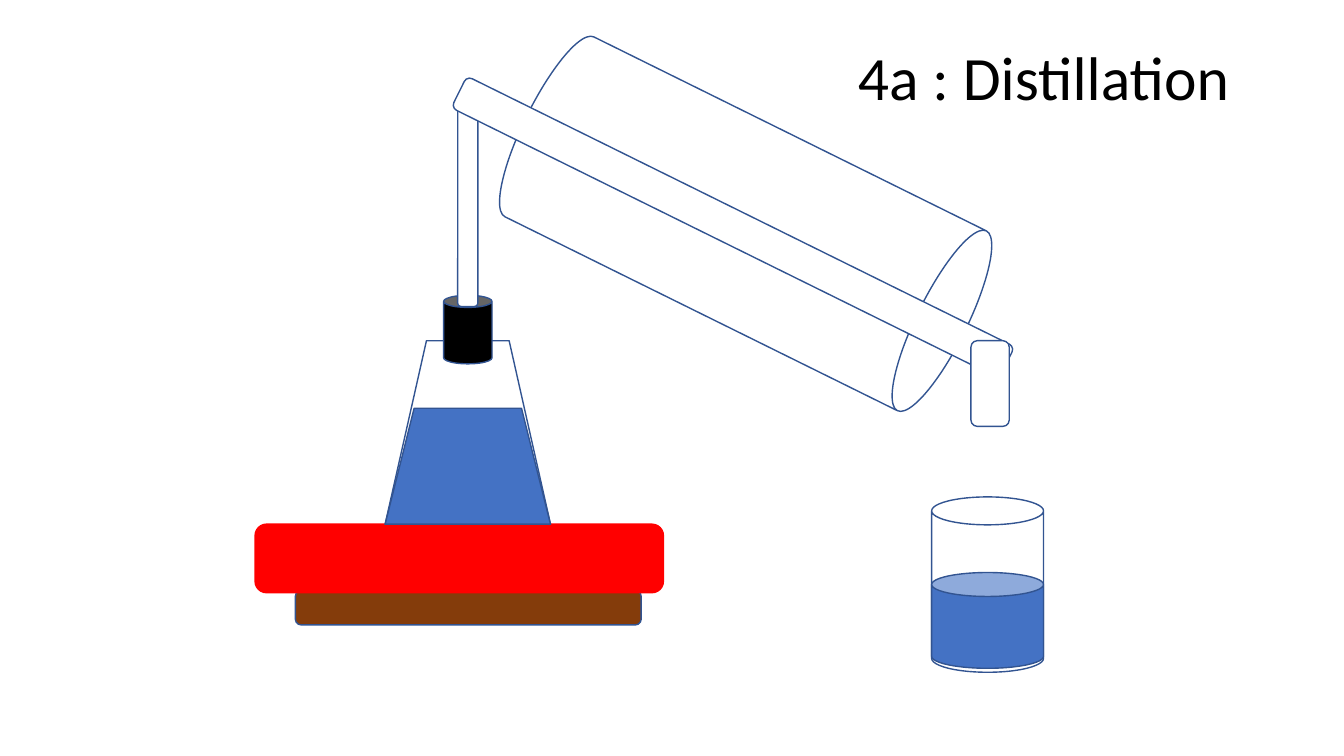
"""Draws a slide of a distillation set-up."""
from dataclasses import dataclass

from pptx import Presentation
from pptx.dml.color import RGBColor
from pptx.enum.shapes import MSO_SHAPE
from pptx.enum.text import MSO_AUTO_SIZE
from pptx.util import Pt

SCALE = 9144


@dataclass(frozen=True)
class Theme:
    """Holds the colours and type sizes of the slide."""
    glass: str = "FFFFFF"
    edge: str = "325491"
    liquid: str = "4472C4"
    heat: str = "FF0000"
    base: str = "843C0B"
    cork: str = "000000"
    ink: str = "000000"
    font: str = "Calibri"
    title: int = 44
    line: int = 1


THEME = Theme()


def px(*vals):
    """Turns whole px into EMU."""
    return [val * SCALE for val in vals]


def part(slide, kind, box, fill=THEME.glass, edge=THEME.edge, turn=0):
    """Adds one filled and outlined part of the apparatus."""
    shape = slide.shapes.add_shape(kind, *px(*box))
    shape.shadow.inherit = False
    shape.rotation = turn
    shape.fill.solid()
    shape.fill.fore_color.rgb = RGBColor.from_string(fill)
    shape.line.color.rgb = RGBColor.from_string(edge)
    shape.line.width = Pt(THEME.line)


def label(slide, text, box):
    """Adds the slide title."""
    frame = slide.shapes.add_textbox(*px(*box)).text_frame
    frame.word_wrap = True
    frame.auto_size = MSO_AUTO_SIZE.SHAPE_TO_FIT_TEXT
    para = frame.paragraphs[0]
    para.text = text
    para.font.size = Pt(THEME.title)
    para.font.name = THEME.font
    para.font.color.rgb = RGBColor.from_string(THEME.ink)


def heater(slide):
    """Adds the hot plate on its base."""
    bar = MSO_SHAPE.ROUNDED_RECTANGLE
    part(slide, bar, (293, 586, 343, 34), THEME.base)
    part(slide, bar, (253, 520, 405, 68), THEME.heat, THEME.heat)


def flask(slide):
    """Adds the empty flask, its cork and the riser tube."""
    part(slide, MSO_SHAPE.TRAPEZOID, (382, 338, 164, 182))
    part(slide, MSO_SHAPE.CAN, (440, 293, 48, 68), THEME.cork)
    part(slide, MSO_SHAPE.ROUNDED_RECTANGLE, (454, 92, 20, 212))


def cooler(slide):
    """Adds the tilted jacket, its inner tube and the spout."""
    tube = MSO_SHAPE.ROUNDED_RECTANGLE
    tilt = 26.3
    part(slide, MSO_SHAPE.CAN, (640, -20, 199, 484), turn=tilt + 90)
    part(slide, tube, (424, 208, 606, 35), turn=tilt)
    part(slide, tube, (963, 338, 38, 85))


def fluids(slide):
    """Adds the beaker and the liquid in both vessels."""
    part(slide, MSO_SHAPE.CAN, (924, 493, 111, 174))
    part(slide, MSO_SHAPE.TRAPEZOID, (382, 405, 164, 115), THEME.liquid)
    part(slide, MSO_SHAPE.CAN, (924, 568, 111, 95), THEME.liquid)


def main():
    """Builds and saves the slide."""
    deck = Presentation()
    deck.slide_width, deck.slide_height = px(1333, 750)
    slide = deck.slides.add_slide(deck.slide_layouts[6])
    for draw in (heater, flask, cooler, fluids):
        draw(slide)
    label(slide, "4a : Distillation", (841, 34, 482, 84))
    deck.save("out.pptx")


if __name__ == "__main__":
    main()
